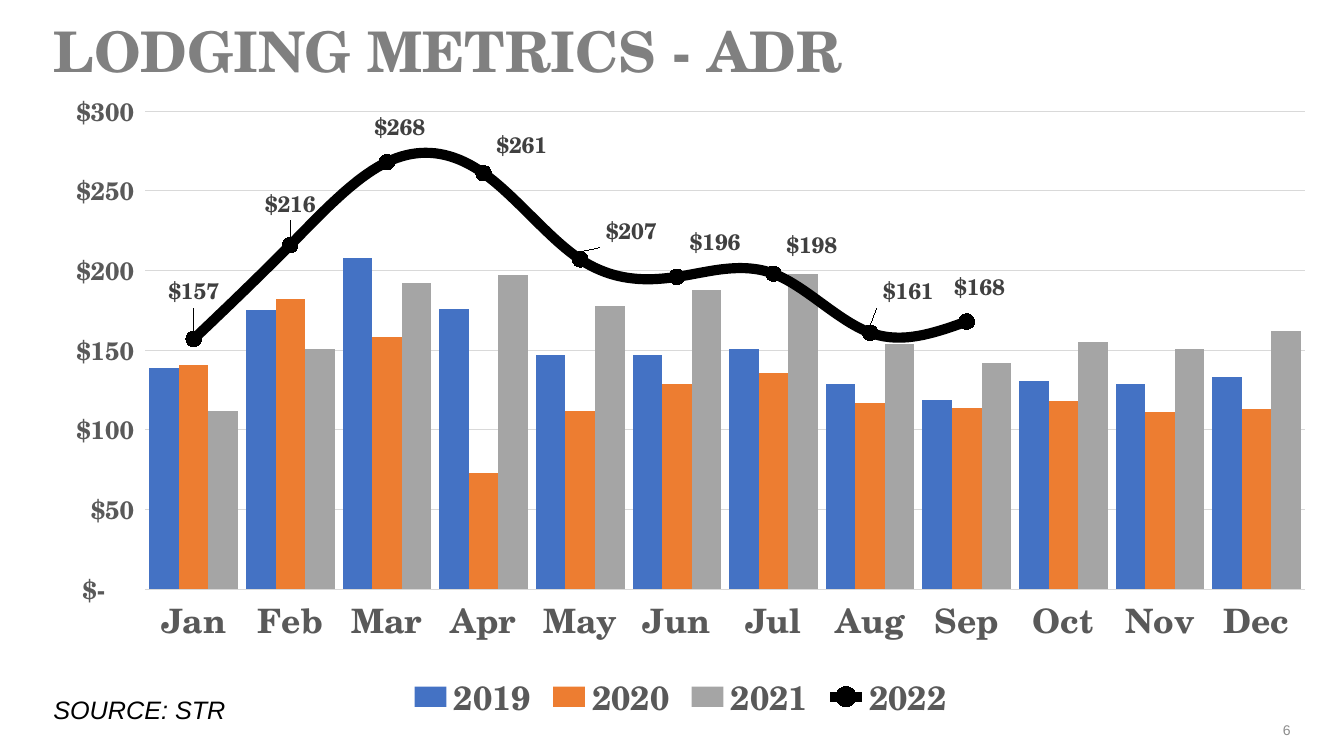
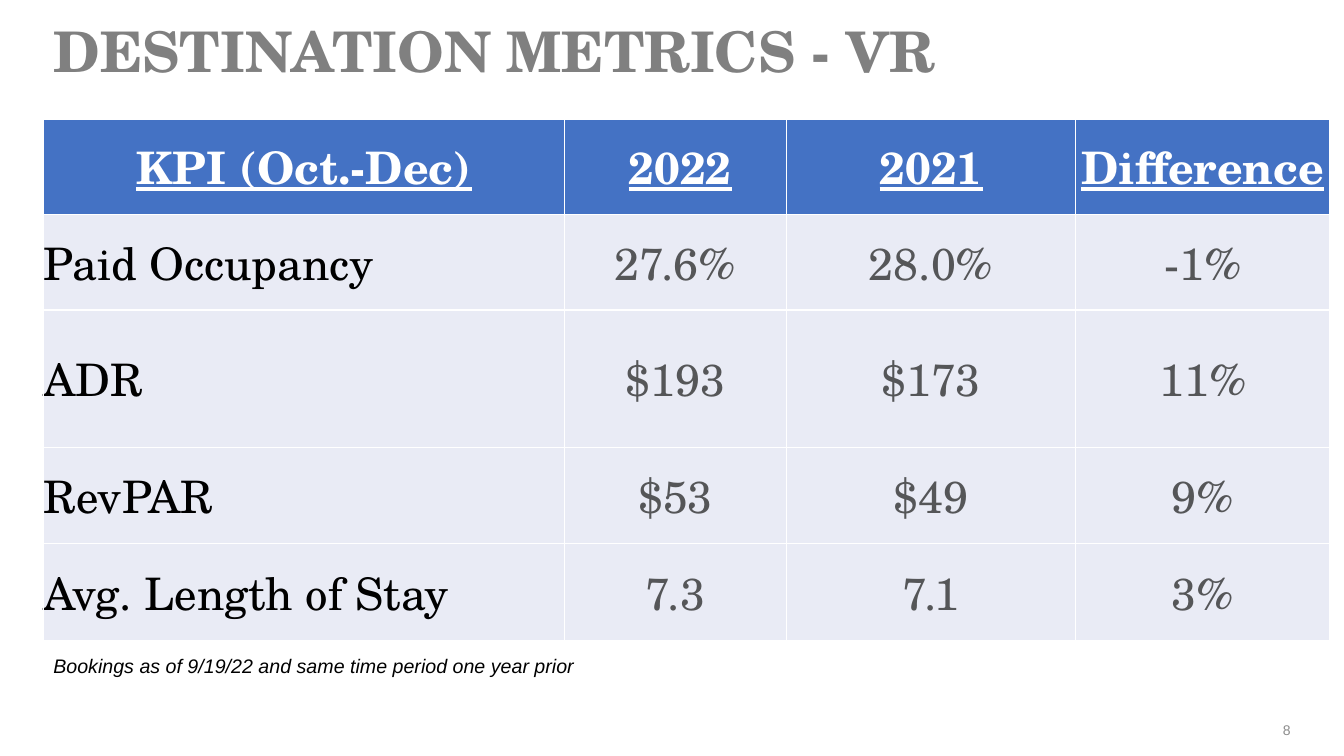
from lxml import etree
from pptx import Presentation
from pptx.chart.data import CategoryChartData
from pptx.dml.color import RGBColor
from pptx.enum.chart import XL_CHART_TYPE, XL_LABEL_POSITION, XL_LEGEND_POSITION, XL_MARKER_STYLE, XL_TICK_MARK
from pptx.enum.text import MSO_ANCHOR, MSO_AUTO_SIZE, PP_ALIGN
from pptx.oxml import parse_xml
from pptx.oxml.ns import nsdecls, qn
from pptx.util import Inches, Pt

SLIDE_WIDTH, SLIDE_HEIGHT = Inches(13.33), Inches(7.5)
SERIF, SANS = "TeX Gyre Schola", "Arial"
BLACK, WHITE, BLUE = "000000", "FFFFFF", "4472C4"
TITLE_GRAY, NUMBER_GRAY, AXIS_GRAY, GRID_GRAY = "808080", "8C8C8C", "595959", "D9D9D9"
LABEL_GRAY, CELL_GRAY, CELL_FILL = "404040", "555658", "E9EBF5"
DOLLARS = '_("$"* #,##0_);_("$"* \\(#,##0\\);_("$"* "-"??_);_(@_)'

# Boxes: left, top, width, height in percent of the slide
MARGIN = 3.23
TITLE_BOX = (MARGIN, 2.13, 79.67, 10)
NUMBER_BOX = (74.27, 93.87, 22.5, 5.33)
SOURCE_BOX = (MARGIN, 91.2, 17.85, 5.33)
CHART_BOX = (MARGIN, 12.13, 94.82, 84.4)
TABLE_BOX = (MARGIN, 15.73, 95.72, 69.07)
NOTE_BOX = (MARGIN, 85.87, 43.66, 4.53)

MONTHS = ["Jan", "Feb", "Mar", "Apr", "May", "Jun", "Jul", "Aug", "Sep", "Oct", "Nov", "Dec"]
BAR_SERIES = [
    ("2019", BLUE, [139, 175, 208, 176, 147, 147, 151, 129, 119, 131, 129, 133]),
    ("2020", "ED7D31", [141, 182, 158, 73, 112, 129, 136, 117, 114, 118, 111, 113]),
    ("2021", "A5A5A5", [112, 151, 192, 197, 178, 188, 198, 154, 142, 155, 151, 162]),
]
LINE_SERIES = ("2022", BLACK, [157, 216, 268, 261, 207, 196, 198, 161, 168, None, None, None])
# Shift of each line label, as shares of the chart
LABEL_SHIFTS = [(0, -0.03), (0, -0.02), (0.01, -0.01), (0.03, 0), (0.04, 0),
                (0.03, -0.01), (0.03, 0), (0.03, -0.02), (0.01, -0.01)]

KPI_ROWS = [
    ["KPI (Oct.-Dec)", "2022", "2021", "Difference"],
    ["Paid Occupancy", "27.6%", "28.0%", "-1%"],
    ["ADR", "$193", "$173", "11%"],
    ["RevPAR", "$53", "$49", "9%"],
    ["Avg. Length of Stay", "7.3", "7.1", "3%"],
]
COLUMN_WEIGHTS = [5.17, 2.2, 2.87, 2.52]
ROW_WEIGHTS = [0.95, 0.95, 1.37, 0.95, 0.97]


def color(value):
    return RGBColor.from_string(value)


def to_lengths(box):
    return [int(share / 100 * side) for share, side in zip(box, (SLIDE_WIDTH, SLIDE_HEIGHT) * 2)]


def style_font(font, name, size, hex_color, bold=False, italic=False):
    font.name, font.size, font.bold, font.italic = name, Pt(size), bold, italic
    font.color.rgb = color(hex_color)


def add_text(slide, box, text, size, hex_color=BLACK, italic=False,
             align=PP_ALIGN.LEFT, anchor=MSO_ANCHOR.TOP):
    frame = slide.shapes.add_textbox(*to_lengths(box)).text_frame
    frame.word_wrap = True
    frame.vertical_anchor = anchor
    frame.text = text
    paragraph = frame.paragraphs[0]
    paragraph.alignment = align
    style_font(paragraph.runs[0].font, SANS, size, hex_color, italic=italic)


def add_titled_slide(presentation, title, number):
    slide = presentation.slides.add_slide(presentation.slide_layouts[5])
    shape = slide.shapes.title
    shape.left, shape.top, shape.width, shape.height = to_lengths(TITLE_BOX)
    frame = shape.text_frame
    frame.text = title
    frame.auto_size = MSO_AUTO_SIZE.NONE
    frame.vertical_anchor = MSO_ANCHOR.MIDDLE
    paragraph = frame.paragraphs[0]
    paragraph.alignment = PP_ALIGN.LEFT
    paragraph.line_spacing = 0.9
    style_font(paragraph.runs[0].font, SERIF, 40, TITLE_GRAY, bold=True)
    add_text(slide, NUMBER_BOX, str(number), 10, NUMBER_GRAY,
             align=PP_ALIGN.RIGHT, anchor=MSO_ANCHOR.MIDDLE)
    return slide


def layout_element(x, y, width=None, height=None):
    """Manual chart layout: an inner plot box, or a shift when no size is given."""
    parts = [("x", x), ("y", y)]
    if width is not None:
        parts = [("layoutTarget", "inner"), ("xMode", "edge"), ("yMode", "edge"),
                 *parts, ("w", width), ("h", height)]
    settings = "".join(f'<c:{tag} val="{value}"/>' for tag, value in parts)
    return parse_xml(f'<c:layout {nsdecls("c")}><c:manualLayout>{settings}</c:manualLayout></c:layout>')


def move_last_series_to_line(chart):
    """Turn the last bar series into a line on the same axes."""
    bar_chart = chart.element.find(".//" + qn("c:barChart"))
    series = bar_chart.findall(qn("c:ser"))[-1]
    for bar_setting in series.findall(qn("c:invertIfNegative")):
        series.remove(bar_setting)
    line_chart = parse_xml(
        f'<c:lineChart {nsdecls("c")}><c:grouping val="standard"/><c:varyColors val="0"/>'
        '<c:marker val="1"/></c:lineChart>')
    line_chart.insert(2, series)
    for axis_id in bar_chart.findall(qn("c:axId")):
        etree.SubElement(line_chart, qn("c:axId")).set("val", axis_id.get("val"))
    bar_chart.addnext(line_chart)


def style_line(series, hex_color):
    series.smooth = True
    series.format.line.width = Pt(7.25)
    series.format.line.color.rgb = color(hex_color)
    series.marker.style, series.marker.size = XL_MARKER_STYLE.CIRCLE, 11
    for fill in (series.marker.format.fill, series.marker.format.line.fill):
        fill.solid()
        fill.fore_color.rgb = color(hex_color)


def label_line(chart, series):
    labels = series.data_labels
    labels.show_value = True
    labels.number_format, labels.number_format_is_linked = DOLLARS, False
    point_labels = [series.points[index].data_label for index in range(len(LABEL_SHIFTS))]
    for label in [labels, *point_labels]:
        style_font(label.font, SERIF, 16, LABEL_GRAY, bold=True)
        label.position = XL_LABEL_POSITION.ABOVE
    for element, shift in zip(chart.element.findall(".//" + qn("c:dLbl")), LABEL_SHIFTS):
        element.find(qn("c:idx")).addnext(layout_element(*shift))


def style_axes(chart):
    category_axis, value_axis = chart.category_axis, chart.value_axis
    for axis, size in ((category_axis, 24), (value_axis, 18)):
        axis.major_tick_mark = axis.minor_tick_mark = XL_TICK_MARK.NONE
        style_font(axis.tick_labels.font, SERIF, size, AXIS_GRAY, bold=True)
    value_axis.minimum_scale, value_axis.maximum_scale, value_axis.major_unit = 0, 300, 50
    value_axis.tick_labels.number_format = DOLLARS
    value_axis.tick_labels.number_format_is_linked = False
    value_axis.format.line.fill.background()
    for line in (category_axis.format.line, value_axis.major_gridlines.format.line):
        line.width = Pt(0.75)
        line.color.rgb = color(GRID_GRAY)


def add_rate_chart(slide, box):
    data = CategoryChartData()
    data.categories = MONTHS
    for name, _, values in [*BAR_SERIES, LINE_SERIES]:
        data.add_series(name, values)
    chart = slide.shapes.add_chart(XL_CHART_TYPE.COLUMN_CLUSTERED, *to_lengths(box), data).chart
    chart.has_title = False
    style_font(chart.font, SANS, 10, BLACK)
    move_last_series_to_line(chart)
    bars, lines = chart.plots
    bars.gap_width, bars.overlap, bars.vary_by_categories = 27, 0, False
    for series, (_, hex_color, _) in zip(bars.series, BAR_SERIES):
        series.format.fill.solid()
        series.format.fill.fore_color.rgb = color(hex_color)
    style_line(lines.series[0], LINE_SERIES[1])
    label_line(chart, lines.series[0])
    style_axes(chart)
    chart.has_legend = True
    chart.legend.position = XL_LEGEND_POSITION.BOTTOM
    chart.legend.include_in_layout = False
    style_font(chart.legend.font, SERIF, 24, AXIS_GRAY, bold=True)
    plot_area = chart.element.find(".//" + qn("c:plotArea"))
    for layout in plot_area.findall(qn("c:layout")):
        plot_area.remove(layout)
    plot_area.insert(0, layout_element(0.08, 0.03, 0.91, 0.75))


def fill_cell(cell, text, is_header, is_name):
    cell.margin_left = cell.margin_right = cell.margin_top = cell.margin_bottom = 0
    cell.vertical_anchor = MSO_ANCHOR.MIDDLE
    cell.fill.solid()
    cell.fill.fore_color.rgb = color(BLUE if is_header else CELL_FILL)
    cell.text_frame.text = text
    paragraph = cell.text_frame.paragraphs[0]
    paragraph.alignment = PP_ALIGN.LEFT if is_name and not is_header else PP_ALIGN.CENTER
    font = paragraph.runs[0].font
    style_font(font, SERIF, 32, WHITE if is_header else BLACK if is_name else CELL_GRAY, bold=is_header)
    font.underline = is_header


def add_kpi_table(slide, box):
    left, top, width, height = to_lengths(box)
    table = slide.shapes.add_table(len(KPI_ROWS), len(COLUMN_WEIGHTS), left, top, width, height).table
    table.horz_banding = False
    for column, weight in zip(table.columns, COLUMN_WEIGHTS):
        column.width = int(width * weight / sum(COLUMN_WEIGHTS))
    for row, weight in zip(table.rows, ROW_WEIGHTS):
        row.height = int(height * weight / sum(ROW_WEIGHTS))
    for row_index, texts in enumerate(KPI_ROWS):
        for column_index, text in enumerate(texts):
            fill_cell(table.cell(row_index, column_index), text, row_index == 0, column_index == 0)
    table.cell(0, 1).margin_left = Inches(0.09)


def main():
    presentation = Presentation()
    presentation.slide_width, presentation.slide_height = SLIDE_WIDTH, SLIDE_HEIGHT

    lodging = add_titled_slide(presentation, "LODGING METRICS - ADR", 6)
    add_text(lodging, SOURCE_BOX, "SOURCE: STR", 18, italic=True)
    add_rate_chart(lodging, CHART_BOX)

    destination = add_titled_slide(presentation, "DESTINATION METRICS - VR", 8)
    add_kpi_table(destination, TABLE_BOX)
    add_text(destination, NOTE_BOX, "Bookings as of 9/19/22 and same time period one year prior", 14, italic=True)

    presentation.save("out.pptx")


if __name__ == "__main__":
    main()
